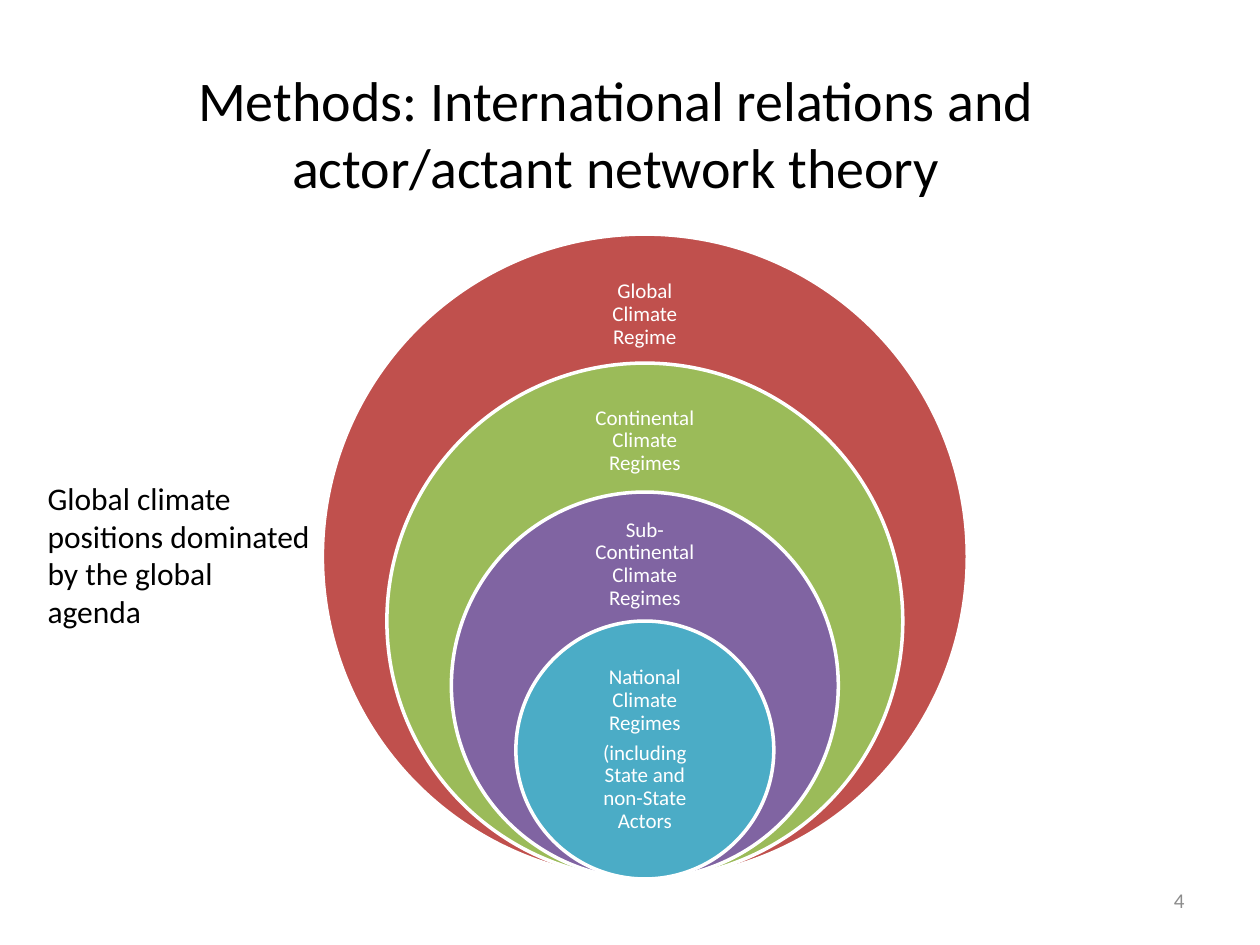
from pptx import Presentation
from pptx.dml.color import RGBColor as Rgb
from pptx.enum.shapes import MSO_SHAPE as Shape
from pptx.enum.text import MSO_ANCHOR as Anchor, PP_ALIGN as Align
from pptx.util import Cm, Pt

FONT = "Calibri"
INK = {
    "black": "000000", "white": "FFFFFF", "gray": "8C8C8C",
    "red": "C0504D", "green": "9BBB59", "purple": "8064A2", "teal": "4BACC6",
}

# Fill, label paragraphs, label offset from the ring top, label height (cm)
RINGS = [
    ("red", ["Global Climate Regime"], 0.94, 1.37),
    ("green", ["Continental Climate Regimes"], 0.91, 1.32),
    ("purple", ["Sub-Continental Climate Regimes"], 0.84, 1.24),
    ("teal", ["National Climate Regimes",
              "(including State and non-State Actors"], 1.68, 1.83),
]


def color(name):
    return Rgb.from_string(INK[name])


def write(slide, box, lines, size, ink="black", align=Align.LEFT,
          anchor=Anchor.MIDDLE, inset=None, leading=None, after=None):
    """Place a text box; box is left, top, width, height in cm."""
    frame = slide.shapes.add_textbox(*map(Cm, box)).text_frame
    frame.word_wrap = True
    frame.vertical_anchor = anchor
    if inset is not None:
        frame.margin_left = frame.margin_right = Cm(inset)
        frame.margin_top = frame.margin_bottom = Cm(inset)
    for i, line in enumerate(lines):
        para = frame.paragraphs[0] if i == 0 else frame.add_paragraph()
        para.text = line
        para.alignment = align
        para.line_spacing = leading
        if after is not None:
            para.space_after = Pt(after)
        para.font.name = FONT
        para.font.size = Pt(size)
        para.font.color.rgb = color(ink)


def add_ring(slide, left, top, size, fill):
    ring = slide.shapes.add_shape(
        Shape.OVAL, Cm(left), Cm(top), Cm(size), Cm(size))
    ring.shadow.inherit = False
    ring.fill.solid()
    ring.fill.fore_color.rgb = color(fill)
    ring.line.color.rgb = color("white")
    ring.line.width = Pt(2)


def add_rings(slide, left, top, size):
    """Nest circles that share their lowest point, each a fifth smaller."""
    label = 2.57
    mid = left + size / 2
    for i, (fill, lines, drop, height) in enumerate(RINGS):
        width = size * (5 - i) / 5
        y = top + size - width
        add_ring(slide, mid - width / 2, y, width, fill)
        write(slide, (mid - label / 2, y + drop, label, height), lines, 12,
              ink="white", align=Align.CENTER, inset=0.23,
              leading=0.9, after=4.2)


def main():
    deck = Presentation()
    deck.slide_width, deck.slide_height = Cm(25.4), Cm(19.05)
    slide = deck.slides.add_slide(deck.slide_layouts[6])

    # Title
    write(slide, (2.69, 1.4, 19.46, 2.54),
          ["Methods: International relations and actor/actant network theory"],
          32, align=Align.CENTER)
    # Page number
    write(slide, (18.2, 17.65, 5.93, 1.01), ["4"], 12,
          ink="gray", align=Align.RIGHT)
    # Nested regimes
    add_rings(slide, 6.5, 4.72, 13)
    # Side note
    write(slide, (0.71, 9.53, 5.79, 3.33),
          ["Global climate positions dominated by the global agenda"],
          18, anchor=Anchor.TOP)

    deck.save("out.pptx")


if __name__ == "__main__":
    main()
